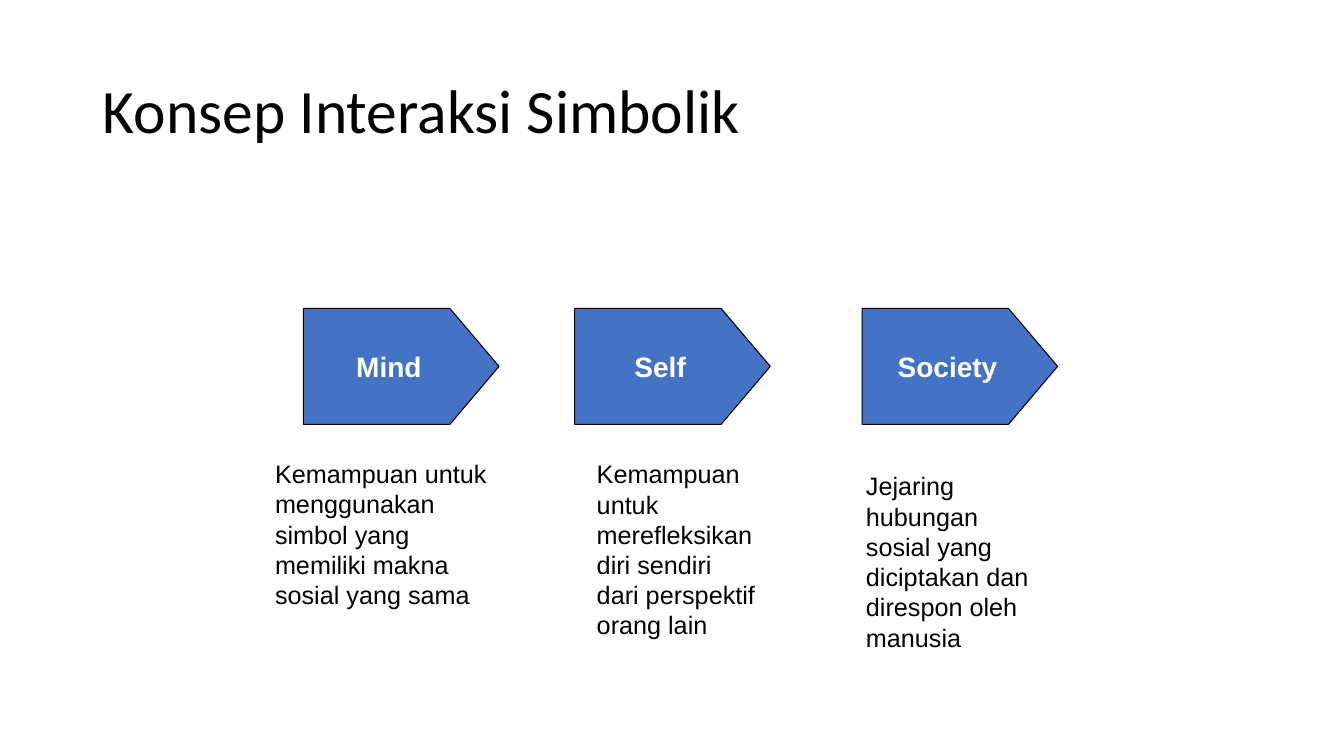
from pptx import Presentation
from pptx import util as u
from pptx.dml.color import RGBColor
from pptx.enum import shapes, text

# Content: label, arrow left, description, description box (left, top, width, height)
TITLE = "Konsep Interaksi Simbolik"
CONCEPTS = [
    ("Mind", 3.01,
     "Kemampuan untuk menggunakan simbol yang memiliki makna sosial yang sama",
     (2.63, 4.5, 2.33, 1.6)),
    ("Self", 5.7,
     "Kemampuan untuk merefleksikan diri sendiri dari perspektif orang lain",
     (5.82, 4.5, 1.82, 1.92)),
    ("Society", 8.55,
     "Jejaring hubungan sosial yang diciptakan dan direspon oleh manusia",
     (8.49, 4.62, 2.01, 1.9)),
]

# Formats
COLORS = {"black": "000000", "white": "FFFFFF", "blue": "4472C4"}
TITLE_FONT = {"name": "Calibri", "size": u.Pt(44), "bold": False}
LABEL_FONT = {"name": "Arial", "size": u.Pt(20), "bold": True}
NOTE_FONT = {"name": "Arial", "size": u.Pt(18), "bold": False}
ARROW_TOP, ARROW_WIDTH, ARROW_HEIGHT = 3.06, 1.94, 1.15
ARROW_POINT = 0.424


def color(name):
    return RGBColor.from_string(COLORS[name])


def inches(*lengths):
    return [u.Inches(length) for length in lengths]


def write(shape, words, font, ink, align, anchor, wrap=True):
    frame = shape.text_frame
    frame.word_wrap = wrap
    frame.vertical_anchor = anchor
    para = frame.paragraphs[0]
    para.alignment = align
    span = para.add_run()
    span.text = words
    for key, value in font.items():
        setattr(span.font, key, value)
    span.font.color.rgb = color(ink)
    return para


def add_arrow(page, label, left):
    arrow = page.shapes.add_shape(
        shapes.MSO_SHAPE.PENTAGON,
        *inches(left, ARROW_TOP, ARROW_WIDTH, ARROW_HEIGHT))
    arrow.adjustments[0] = ARROW_POINT
    arrow.shadow.inherit = False
    arrow.fill.solid()
    arrow.fill.fore_color.rgb = color("blue")
    arrow.line.color.rgb = color("black")
    arrow.line.width = u.Pt(0.75)
    write(arrow, label, LABEL_FONT, "white", text.PP_ALIGN.CENTER,
          text.MSO_ANCHOR.MIDDLE, wrap=False)


def add_description(page, words, place):
    box = page.shapes.add_textbox(*inches(*place))
    write(box, words, NOTE_FONT, "black", text.PP_ALIGN.LEFT, text.MSO_ANCHOR.TOP)
    box.text_frame.auto_size = text.MSO_AUTO_SIZE.SHAPE_TO_FIT_TEXT


def main():
    deck = Presentation()
    deck.slide_width, deck.slide_height = inches(13.33, 7.5)
    page = deck.slides.add_slide(deck.slide_layouts.get_by_name("Title Only"))

    # Title
    title = page.shapes.title
    title.left, title.top, title.width, title.height = inches(0.92, 0.4, 11.5, 1.45)
    para = write(title, TITLE, TITLE_FONT, "black", text.PP_ALIGN.LEFT,
                 text.MSO_ANCHOR.MIDDLE)
    para.line_spacing = 0.9

    # Arrows with their descriptions
    for label, left, words, place in CONCEPTS:
        add_arrow(page, label, left)
        add_description(page, words, place)

    deck.save("out.pptx")


if __name__ == "__main__":
    main()
